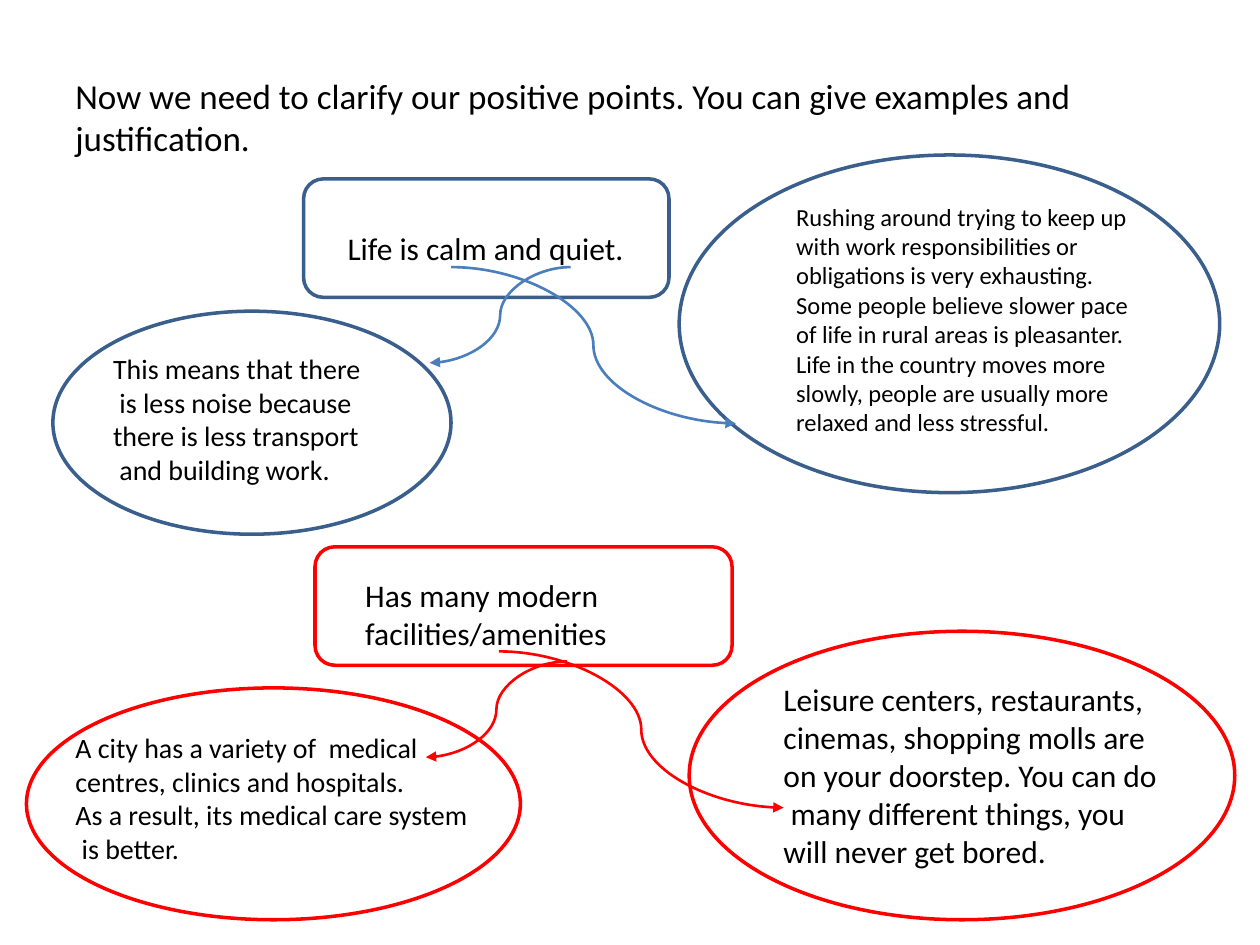
from lxml import etree
from pptx import Presentation
from pptx import util as u
from pptx.dml.color import RGBColor
from pptx.enum import shapes, text
from pptx.oxml.ns import qn

BLACK = RGBColor(0x00, 0x00, 0x00)
NAVY = RGBColor(0x3A, 0x5F, 0x8C)
BLUE = RGBColor(0x4B, 0x7E, 0xBC)
RED = RGBColor(0xFF, 0x00, 0x00)
FONT = "Calibri"
COLS, ROWS = 100, 31  # grid of one idea map
RIGHT_SWEEP, LEFT_SWEEP = (22.6, 12.4), (-11.2, 7.6)  # arrow spans on that grid
ROUNDED = shapes.MSO_SHAPE.FLOWCHART_ALTERNATE_PROCESS
OVAL = shapes.MSO_SHAPE.OVAL


def add_text(slide, box, lines, size, wrap=True, anchor=text.MSO_ANCHOR.TOP):
    tf = slide.shapes.add_textbox(*box).text_frame
    tf.word_wrap = wrap
    tf.vertical_anchor = anchor
    for i, line in enumerate(lines):
        p = tf.paragraphs[0] if i == 0 else tf.add_paragraph()
        p.text = line
        p.font.name, p.font.size = FONT, u.Pt(size)
        p.font.color.rgb = BLACK


def add_outline(slide, kind, box, color):
    sp = slide.shapes.add_shape(kind, *box)
    sp.shadow.inherit = False
    sp.fill.background()
    sp.line.color.rgb = color
    sp.line.width = u.Pt(2)


def add_arrow(slide, start, end, color):
    c = slide.shapes.add_connector(shapes.MSO_CONNECTOR.CURVE, *start, *end)
    c.line.color.rgb = color
    c.line.width = u.Pt(1.5)
    etree.SubElement(c.line._get_or_add_ln(), qn("a:tailEnd"), type="triangle")
    etree.SubElement(c._element.spPr, qn("a:effectLst"))


def title(slide, box):
    line = ("Now we need to clarify our positive points. "
            "You can give examples and justification.")
    add_text(slide, box, [line], 20, anchor=text.MSO_ANCHOR.MIDDLE)


def idea_map(slide, box, bubbles, arrows, outline, arrow_color):
    """A point with its explanations, laid out on a COLS x ROWS grid in box."""
    left, top, width, height = box

    def size(x, y):
        return int(width * x / COLS), int(height * y / ROWS)

    def point(x, y):
        dx, dy = size(x, y)
        return left + dx, top + dy

    def area(x, y, w, h):
        return point(x, y) + size(w, h)

    # Outlined bubbles with their wording
    for kind, frame, words, lines, pt, wrap in bubbles:
        add_outline(slide, kind, area(*frame), outline)
        add_text(slide, area(*words), lines, pt, wrap)
    # Curved arrows from the point to its explanations
    for (x, y), (dx, dy) in arrows:
        add_arrow(slide, point(x, y), point(x + dx, y + dy), arrow_color)


# Each bubble: kind, outline area, text area, lines, text size, wrap
CALM = [
    (ROUNDED, (24.1, 2.2, 29, 9.4), (26.6, 5.7, 24.8, 4),
     ["Life is calm and quiet."], 18, False),
    (OVAL, (53.9, 0.3, 42.9, 26.8), (62.2, 3.5, 28.5, 19.9),
     ["Rushing around trying to keep up with work responsibilities or "
      "obligations is very exhausting. Some people believe slower pace of "
      "life in rural areas is pleasanter. Life in the country moves more "
      "slowly, people are usually more relaxed and less stressful."], 14, True),
    (OVAL, (4.2, 12.7, 31.6, 17.7), (8, 15.4, 29, 11.8),
     ["This means that there", " is less noise because",
      "there is less transport", " and building work."], 16, True),
]
MODERN = [
    (ROUNDED, (25, 0.4, 33.1, 9.4), (28, 2.2, 25.1, 7.1),
     ["Has many modern", "facilities/amenities"], 18, True),
    (OVAL, (54.7, 7.1, 43.3, 22.9), (61.2, 10.5, 32.6, 16.2),
     ["Leisure centers, restaurants,", "cinemas, shopping molls are",
      "on your doorstep. You can do", " many different things, you",
      "will never get bored."], 18, False),
    (OVAL, (2.1, 11.6, 39.2, 18.4), (5, 14.5, 33.5, 11.8),
     ["A city has a variety of  medical", "centres, clinics and hospitals.",
      "As a result, its medical care system", " is better."], 16, False),
]


def main():
    prs = Presentation()
    prs.slide_width, prs.slide_height = u.Inches(10), u.Inches(7.5)
    slide = prs.slides.add_slide(prs.slide_layouts[6])
    w, h = u.Inches(10), u.Inches(3.1)
    top = u.Inches(1.2)

    title(slide, (int(w * 0.05), u.Inches(0.3), int(w * 0.9), u.Inches(1.25)))
    idea_map(slide, (0, top, w, h), CALM,
             [((35.8, 9.2), RIGHT_SWEEP), ((45.3, 9.2), LEFT_SWEEP)], NAVY, BLUE)
    idea_map(slide, (0, top + h, w, h), MODERN,
             [((39.6, 8.7), RIGHT_SWEEP), ((45, 9.5), LEFT_SWEEP)], RED, RED)
    prs.save("out.pptx")


if __name__ == "__main__":
    main()
